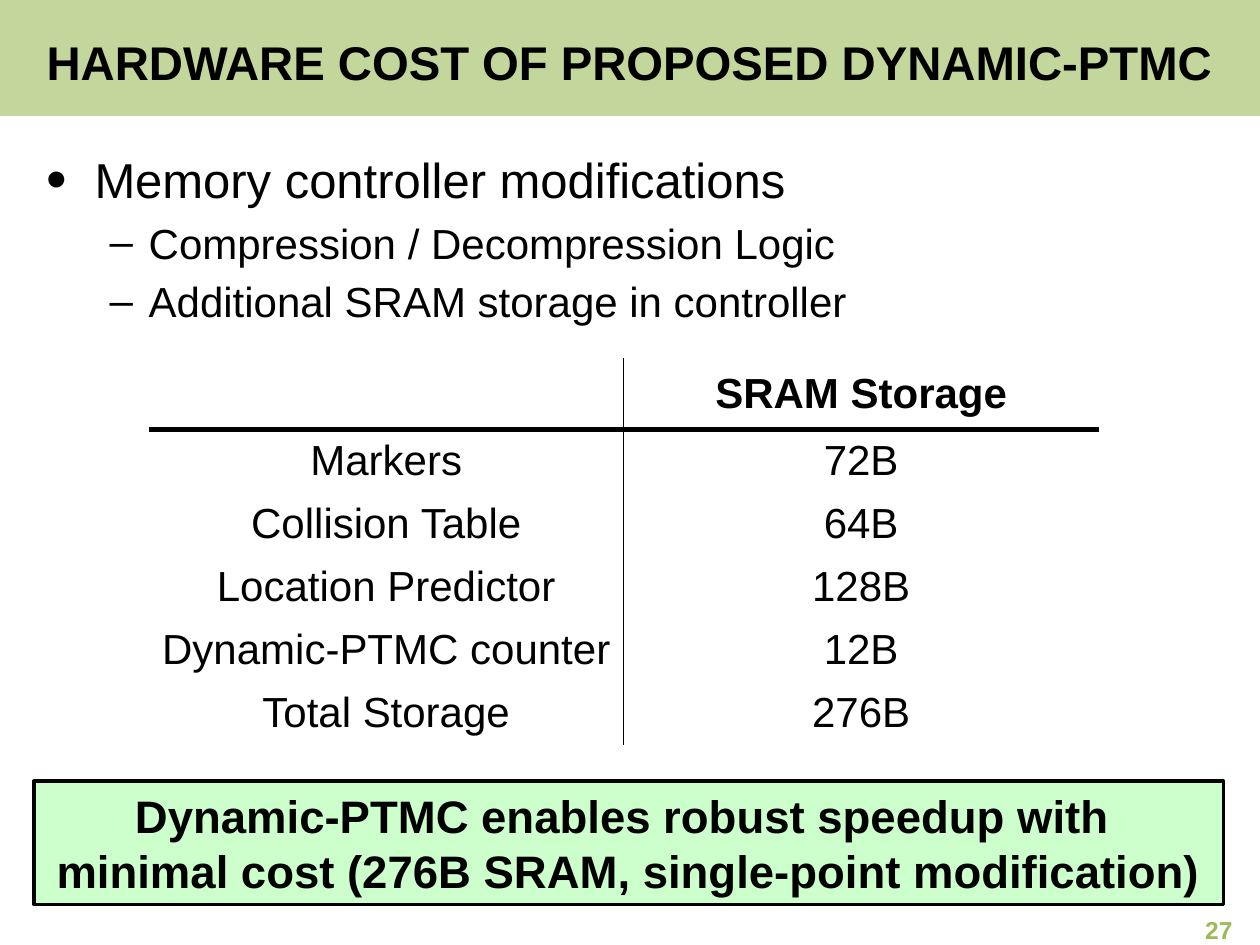
from pptx import Presentation
from pptx import util as u
from pptx.dml.color import RGBColor
from pptx.enum import shapes, text
from pptx.oxml import parse_xml
from pptx.oxml.ns import nsdecls


def style(font, size, color="000000", bold=False):
    font.name = "Arial"
    font.size = u.Pt(size)
    font.bold = bold
    font.color.rgb = RGBColor.from_string(color)


def place(item, left, top, width, height):
    item.left, item.top = u.Inches(left), u.Inches(top)
    item.width, item.height = u.Inches(width), u.Inches(height)


deck = Presentation()
deck.slide_width, deck.slide_height = u.Inches(10), u.Inches(7.5)
page = deck.slides.add_slide(deck.slide_layouts[1])
margin = 0.27

title, body = page.placeholders
place(title, margin, 0.22, 9.61, 0.53)
title.text_frame.text = "HARDWARE COST OF PROPOSED DYNAMIC-PTMC"
title.text_frame.vertical_anchor = text.MSO_ANCHOR.MIDDLE
title.text_frame.auto_size = text.MSO_AUTO_SIZE.NONE
para = title.text_frame.paragraphs[0]
para.alignment = text.PP_ALIGN.LEFT
style(para.font, 27, bold=True)

place(body, margin, 1.14, 7.89, 1.67)
body.text_frame.auto_size = text.MSO_AUTO_SIZE.NONE
points = [
    (0, "Memory controller modifications"),
    (1, "Compression / Decompression Logic"),
    (1, "Additional SRAM storage in controller"),
]
levels = [("•", 120, 0.38, 0.38, 28), ("–", 100, 0.81, 0.31, 24)]
body.text_frame.text = "\n".join(words for level, words in points)
for para, (level, words) in zip(body.text_frame.paragraphs, points):
    bullet, scale, indent, hang, size = levels[level]
    para.level = level
    settings = para._p.get_or_add_pPr()
    settings.set("marL", str(u.Inches(indent)))
    settings.set("indent", str(-u.Inches(hang)))
    for tag in (
        f'spcBef {nsdecls("a")}><a:spcPct val="20000"/></a:spcBef',
        f'buSzPct {nsdecls("a")} val="{scale * 1000}"/',
        f'buFont {nsdecls("a")} typeface="Arial"/',
        f'buChar {nsdecls("a")} char="{bullet}"/',
    ):
        settings.append(parse_xml(f"<a:{tag}>"))
    style(para.font, size)

banner = page.shapes.add_shape(shapes.MSO_SHAPE.RECTANGLE, 0, 0, deck.slide_width, u.Inches(0.92))
callout = page.shapes.add_shape(shapes.MSO_SHAPE.RECTANGLE, 0, 0, 0, 0)
place(callout, margin, 6.2, 9.44, 0.98)
for box, color in ((banner, "C3D69B"), (callout, "CCFFCC")):
    box.shadow.inherit = False
    box.fill.solid()
    box.fill.fore_color.rgb = RGBColor.from_string(color)
banner.line.fill.background()
banner.element.getparent().insert(2, banner.element)
callout.line.color.rgb = RGBColor.from_string("000000")
callout.line.width = u.Pt(2)
callout.text_frame.text = (
    "Dynamic-PTMC enables robust speedup with \n"
    "minimal cost (276B SRAM, single-point modification)"
)
for para in callout.text_frame.paragraphs:
    para.alignment = text.PP_ALIGN.CENTER
    style(para.font, 26, bold=True)

number = page.shapes.add_textbox(0, 0, 0, 0)
place(number, 7.55, 7.25, 2.33, 0.26)
number.text_frame.word_wrap = True
number.text_frame.vertical_anchor = text.MSO_ANCHOR.MIDDLE
number.text_frame.text = "27"
para = number.text_frame.paragraphs[0]
para.alignment = text.PP_ALIGN.RIGHT
style(para.font, 14, "9BBB59", True)

rows = [
    ("", "SRAM Storage"),
    ("Markers", "72B"),
    ("Collision Table", "64B"),
    ("Location Predictor", "128B"),
    ("Dynamic-PTMC counter", "12B"),
    ("Total Storage", "276B"),
]
frame = page.shapes.add_table(len(rows), 2, 0, 0, 0, 0)
place(frame, 1.18, 2.84, 7.54, 3.07)
table = frame.table
table.first_row = table.horz_banding = False
for column in table.columns:
    column.width = u.Inches(3.77)
for index, values in enumerate(rows):
    table.rows[index].height = u.Inches(0.5 if index else 0.57)
    for column, value in enumerate(values):
        cell = table.cell(index, column)
        cell.text = value
        cell.vertical_anchor = text.MSO_ANCHOR.MIDDLE
        cell.fill.background()
        para = cell.text_frame.paragraphs[0]
        para.alignment = text.PP_ALIGN.CENTER
        style(para.font, 24, bold=index == 0)
        widths = {"L": column, "R": 1 - column, "T": 3 * (index == 1), "B": 3 * (index == 0)}
        for position, (side, width) in enumerate(widths.items()):
            paint = '<a:solidFill><a:srgbClr val="000000"/></a:solidFill>' if width else "<a:noFill/>"
            cell._tc.get_or_add_tcPr().insert(position, parse_xml(
                f'<a:ln{side} {nsdecls("a")} w="{u.Pt(width)}">{paint}</a:ln{side}>'))

deck.save("out.pptx")
